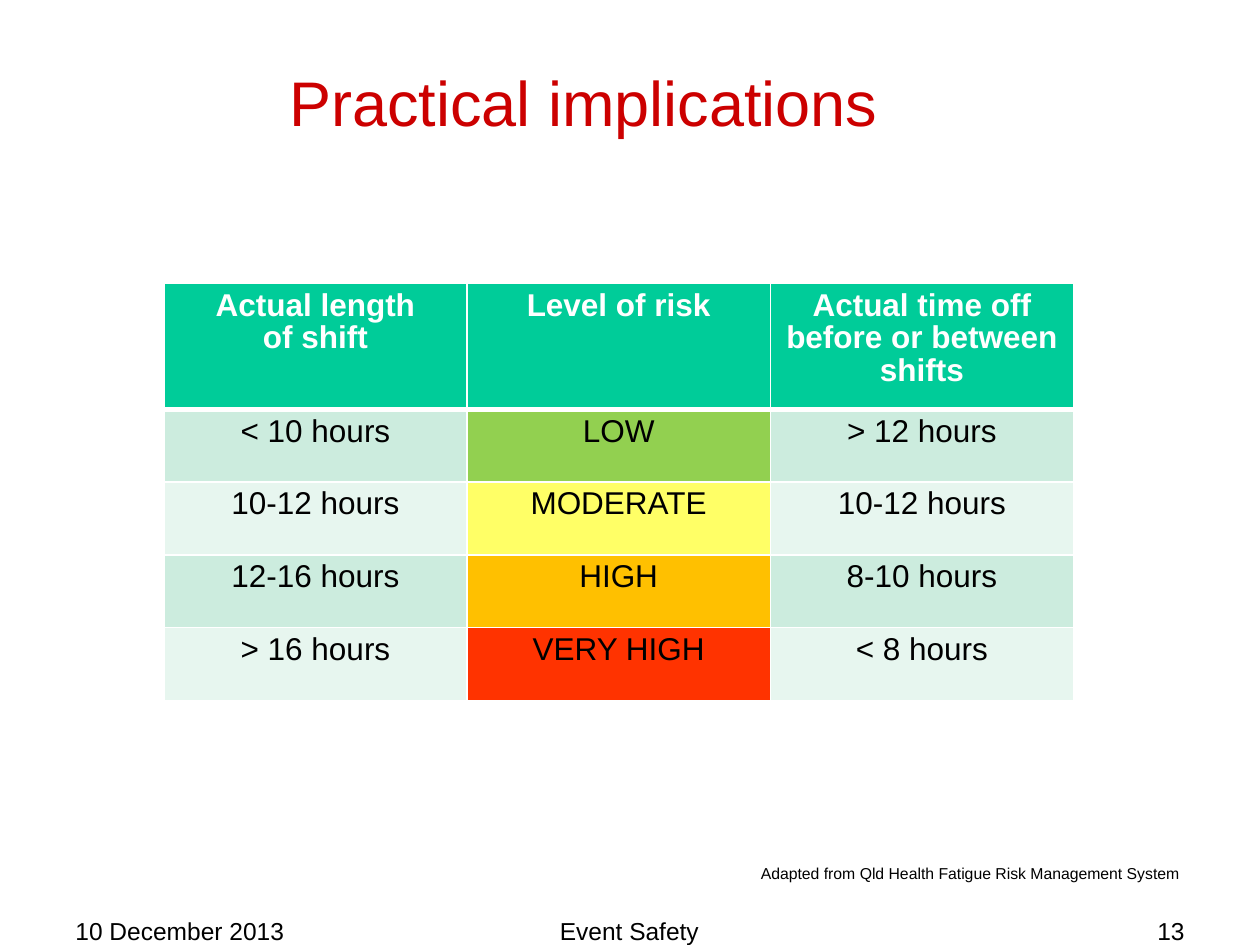
"""Build a slide with a table of fatigue risk by shift length and time off."""
from dataclasses import dataclass

from lxml.etree import SubElement
from pptx import Presentation
from pptx.dml.color import RGBColor
from pptx.enum.text import MSO_ANCHOR, PP_ALIGN
from pptx.oxml.ns import qn
from pptx.util import Pt


@dataclass(frozen=True)
class Theme:
    font: str = "Arial"
    title: str = "CC0000"
    text: str = "000000"
    white: str = "FFFFFF"
    header: str = "00CC99"
    bands: tuple = ("CCECDE", "E7F6EF")
    title_size: float = 36
    table_size: float = 18
    footer_size: float = 14
    source_size: float = 9
    spacing: float = 0.93


THEME = Theme()
TITLE = "Practical implications"
HEADINGS = ["Actual length\nof shift", "Level of risk", "Actual time off before or between shifts"]
RISKS = [
    ("< 10 hours", "LOW", "> 12 hours", "92D050"),
    ("10-12 hours", "MODERATE", "10-12 hours", "FFFF66"),
    ("12-16 hours", "HIGH", "8-10 hours", "FFC000"),
    ("> 16 hours", "VERY HIGH", "< 8 hours", "FF3300"),
]
LABELS = [
    ("10 December 2013", (36, 520, 168, 24), THEME.footer_size, PP_ALIGN.LEFT, 1),
    ("Event Safety", (212.4, 520, 294.5, 24), THEME.footer_size, PP_ALIGN.CENTER, 1),
    ("13", (516, 520, 168, 24), THEME.footer_size, PP_ALIGN.RIGHT, 1),
    ("Adapted from Qld Health Fatigue Risk Management System", (427.7, 491, 283.7, 17.3),
     THEME.source_size, PP_ALIGN.LEFT, THEME.spacing),
]
TITLE_PLACE = (40.3, 32.4, 586, 51)
TABLE_PLACE = (93.6, 162, 519.9, 238.3)
HEADER_HEIGHT = 72


def write(frame, text, size, color=THEME.text, align=PP_ALIGN.CENTER, bold=False, spacing=1):
    """Fill a text frame, one paragraph for each line of text."""
    frame.word_wrap = True
    frame.text = text
    for para in frame.paragraphs:
        para.alignment = align
        para.line_spacing = spacing
        for span in para.runs:
            span.font.name = THEME.font
            span.font.size = Pt(size)
            span.font.bold = bold
            span.font.color.rgb = RGBColor.from_string(color)


def paint_cell(cell, fill, bottom=1):
    """Give a cell white borders and a solid fill."""
    properties = cell._tc.get_or_add_tcPr()
    for side, width in (("L", 1), ("R", 1), ("T", 1), ("B", bottom)):
        line = SubElement(properties, qn(f"a:ln{side}"), w=str(Pt(width)))
        SubElement(SubElement(line, qn("a:solidFill")), qn("a:srgbClr"), val=THEME.white)
    cell.fill.solid()
    cell.fill.fore_color.rgb = RGBColor.from_string(fill)


def add_title(page):
    """Place and format the title placeholder."""
    box = page.shapes.title
    box.left, box.top, box.width, box.height = map(Pt, TITLE_PLACE)
    box.text_frame.vertical_anchor = MSO_ANCHOR.MIDDLE
    write(box.text_frame, TITLE, THEME.title_size, color=THEME.title)


def add_risk_table(page):
    """Add the table with banded rows and coloured risk levels."""
    table = page.shapes.add_table(len(RISKS) + 1, len(HEADINGS), *map(Pt, TABLE_PLACE)).table
    for column in table.columns:
        column.width = Pt(TABLE_PLACE[2] / len(HEADINGS))
    for index, row in enumerate(table.rows):
        row.height = Pt((TABLE_PLACE[3] - HEADER_HEIGHT) / len(RISKS) if index else HEADER_HEIGHT)
    for cell, heading in zip(table.rows[0].cells, HEADINGS):
        paint_cell(cell, THEME.header, bottom=3)
        write(cell.text_frame, heading, THEME.table_size, color=THEME.white, bold=True,
              spacing=THEME.spacing)
    for index, (shift, level, rest, color) in enumerate(RISKS):
        band = THEME.bands[index % 2]
        cells = table.rows[index + 1].cells
        for cell, text, fill in zip(cells, (shift, level, rest), (band, color, band)):
            paint_cell(cell, fill)
            write(cell.text_frame, text, THEME.table_size, spacing=THEME.spacing)


def main():
    deck = Presentation()
    deck.slide_width, deck.slide_height = Pt(720), Pt(540)
    page = deck.slides.add_slide(deck.slide_layouts[5])
    add_title(page)
    add_risk_table(page)
    for text, place, size, align, spacing in LABELS:
        box = page.shapes.add_textbox(*map(Pt, place))
        write(box.text_frame, text, size, align=align, spacing=spacing)
    deck.save("out.pptx")


if __name__ == "__main__":
    main()
